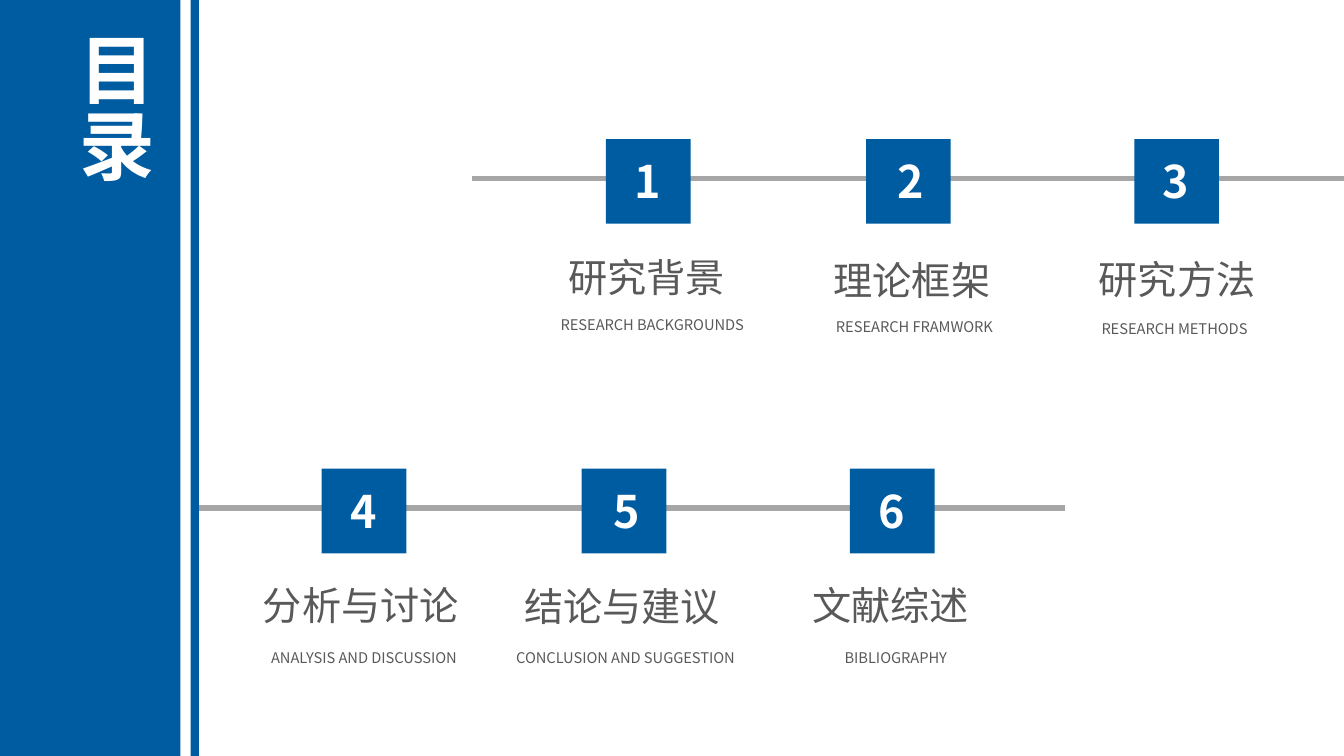
from dataclasses import dataclass

from lxml.etree import SubElement
from pptx import Presentation
from pptx.dml.color import RGBColor
from pptx.enum.shapes import MSO_CONNECTOR as Connector, MSO_SHAPE as Preset
from pptx.enum.text import MSO_ANCHOR as Anchor, MSO_AUTO_SIZE as AutoSize, PP_ALIGN as Align
from pptx.oxml.ns import qn
from pptx.util import Inches, Pt

COLORS = {"blue": "005CA1", "gray": "A6A6A6", "text": "595959", "white": "FFFFFF"}
FONT = "Noto Sans CJK SC"
WIDTH, HEIGHT = Inches(13.33), Inches(7.5)
ROWS = 90
CELL = HEIGHT / ROWS
COLUMNS = WIDTH / CELL

SQUARE = 10.08
SQUARE_STEPS = (0, 30.96, 62.88)
NUMBER_SHIFTS = (-1.44, -1.08, -1.44)
NUMBER_WIDTH = 12.84
LABEL_HEIGHT = 6.84
CAPTION_HEIGHT = 3.36


@dataclass(frozen=True)
class Area:
    left: float
    top: float
    width: float
    height: float

    def lengths(self) -> tuple:
        return tuple(round(side * CELL) for side in (self.left, self.top, self.width, self.height))


@dataclass(frozen=True)
class Style:
    size: float
    color: str
    bold: bool = False
    align: Align = Align.CENTER
    wrap: bool = True


@dataclass(frozen=True)
class Topic:
    label: str
    label_left: float
    label_top: float
    caption: str
    caption_left: float
    caption_top: float
    caption_width: float

    def label_area(self) -> Area:
        return Area(self.label_left, self.label_top, 2.04 + 4.8 * len(self.label), LABEL_HEIGHT)

    def caption_area(self) -> Area:
        return Area(self.caption_left, self.caption_top, self.caption_width, CAPTION_HEIGHT)


@dataclass(frozen=True)
class Track:
    first_number: int
    line_start: float
    line_end: float
    square_left: float
    square_top: float
    number_height: float
    topics: tuple


HEADING = Style(54, "white", bold=True, align=Align.JUSTIFY)
NUMBER = Style(32, "white", bold=True)
LABEL = Style(28, "text", align=Align.LEFT, wrap=False)
CAPTION = Style(10.5, "text", wrap=False)

PANELS = (Area(0, 0, 21.48, ROWS), Area(22.68, 0, 1, ROWS))
HEADING_AREA = Area(6.96, 3.24, 13.32, 23.04)

TRACKS = (
    Track(1, 56.16, COLUMNS, 72.12, 16.56, 8.64, (
        Topic("研究背景", 66.48, 29.52, "RESEARCH BACKGROUNDS", 64.8, 36.96, 25.68),
        Topic("理论框架", 98.04, 29.88, "RESEARCH FRAMWORK", 97.56, 37.2, 22.56),
        Topic("研究方法", 129.6, 29.76, "RESEARCH METHODS", 129.36, 37.44, 20.88),
    )),
    Track(4, 22.8, 126.72, 38.28, 55.8, 7.68, (
        Topic("分析与讨论", 30.12, 68.64, "ANALYSIS AND DISCUSSION", 29.4, 76.68, 27.84),
        Topic("结论与建议", 61.2, 68.76, "CONCLUSION AND SUGGESTION", 59.16, 76.68, 30.6),
        Topic("文献综述", 95.52, 68.64, "BIBLIOGRAPHY", 99, 76.68, 15.24),
    )),
)


def color(name: str) -> RGBColor:
    return RGBColor.from_string(COLORS[name])


def write(box, text: str, style: Style) -> None:
    frame = box.text_frame
    frame.word_wrap = style.wrap
    frame.auto_size = AutoSize.SHAPE_TO_FIT_TEXT
    frame.vertical_anchor = Anchor.TOP
    para = frame.paragraphs[0]
    para.alignment = style.align
    span = para.add_run()
    span.text = text
    span.font.size = Pt(style.size)
    span.font.bold = style.bold
    span.font.color.rgb = color(style.color)
    span.font.name = FONT
    SubElement(span.font._element, qn("a:ea"), typeface=FONT)


def add_text(shapes, area: Area, text: str, style: Style) -> None:
    write(shapes.add_textbox(*area.lengths()), text, style)


def add_block(shapes, area: Area) -> None:
    block = shapes.add_shape(Preset.RECTANGLE, *area.lengths())
    block.shadow.inherit = False
    block.fill.solid()
    block.fill.fore_color.rgb = color("blue")
    block.line.fill.background()


def add_track(shapes, track: Track) -> None:
    middle = round((track.square_top + 4.68) * CELL)
    line = shapes.add_connector(
        Connector.STRAIGHT, round(track.line_start * CELL), middle, round(track.line_end * CELL), middle
    )
    line.line.color.rgb = color("gray")
    line.line.width = Pt(4)
    SubElement(line._element.spPr, qn("a:effectLst"))

    for index, topic in enumerate(track.topics):
        left = track.square_left + SQUARE_STEPS[index]
        badge = shapes.add_group_shape().shapes
        add_block(badge, Area(left, track.square_top, SQUARE, SQUARE))
        number_area = Area(
            left + NUMBER_SHIFTS[index], track.square_top + 1.2, NUMBER_WIDTH, track.number_height
        )
        add_text(badge, number_area, str(track.first_number + index), NUMBER)
        add_text(shapes, topic.label_area(), topic.label, LABEL)
        add_text(shapes, topic.caption_area(), topic.caption, CAPTION)


def add_heading(page) -> None:
    title = page.shapes.title
    title.left, title.top, title.width, title.height = HEADING_AREA.lengths()
    write(title, "目录", HEADING)
    title.text_frame._txBody.bodyPr.set("vert", "eaVert")
    page.shapes._spTree.append(title._element)


def main() -> None:
    deck = Presentation()
    deck.slide_width, deck.slide_height = WIDTH, HEIGHT
    page = deck.slides.add_slide(deck.slide_layouts.get_by_name("Title Only"))
    for track in TRACKS:
        add_track(page.shapes, track)
    for panel in PANELS:
        add_block(page.shapes, panel)
    add_heading(page)
    deck.save("out.pptx")


if __name__ == "__main__":
    main()
